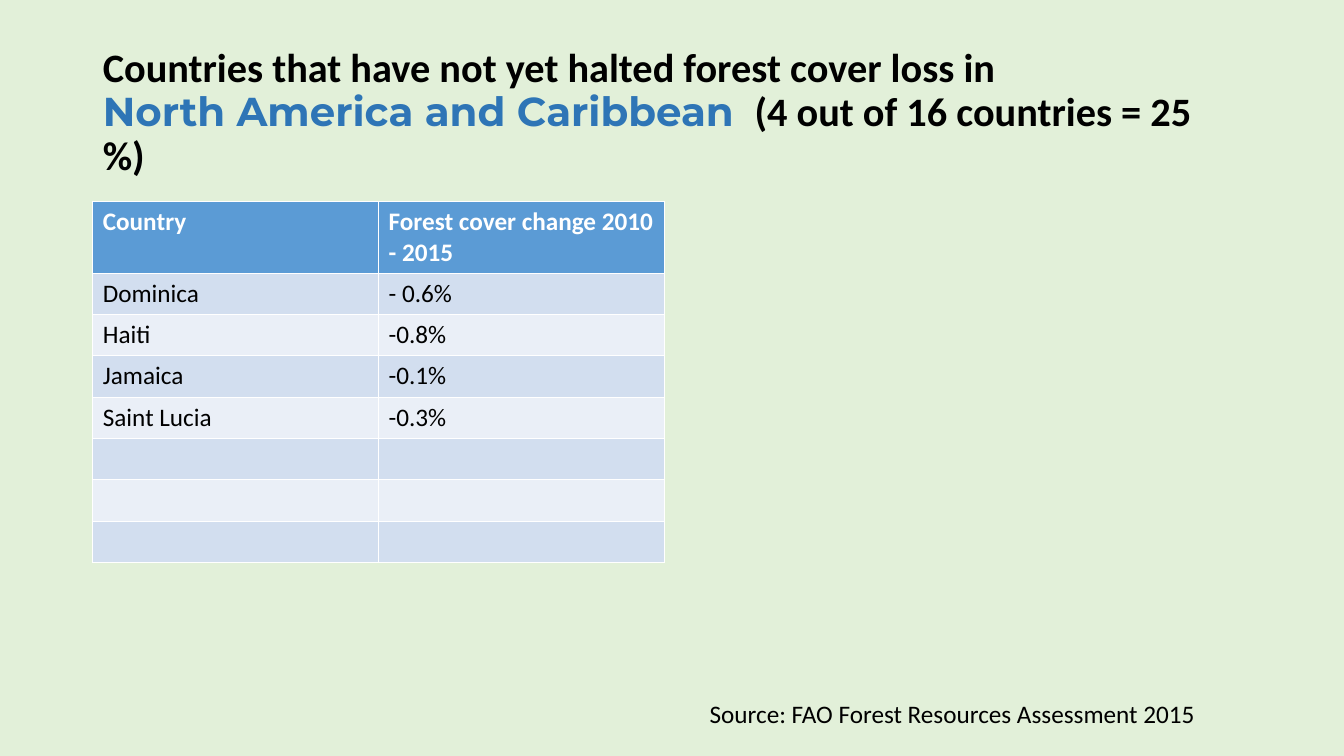
from pptx import Presentation
from pptx.dml.color import RGBColor
from pptx.enum import text
from pptx.util import Inches, Pt


def rgb(value):
    return RGBColor.from_string(value)


def style(r, size, color, bold=False, font="Calibri"):
    r.font.name = font
    r.font.size = Pt(size)
    r.font.bold = bold
    r.font.color.rgb = rgb(color)


prs = Presentation()
prs.slide_width, prs.slide_height = Inches(13.33), Inches(7.5)
s = prs.slides.add_slide(prs.slide_layouts[5])
s.background.fill.solid()
s.background.fill.fore_color.rgb = rgb("E2F0D9")

title = s.shapes.title
title.left, title.top = Inches(0.92), Inches(0.4)
title.width, title.height = Inches(11.5), Inches(1.45)
tf = title.text_frame
tf.word_wrap = True
tf.auto_size = text.MSO_AUTO_SIZE.NONE
tf.vertical_anchor = text.MSO_ANCHOR.MIDDLE
p = tf.paragraphs[0]
p.text = "Countries that have not yet halted forest cover loss in\v"
p.alignment = text.PP_ALIGN.LEFT
p.line_spacing = 0.9
style(p.runs[0], 28.8, "000000", True)
for words, color, font in [
    ("North America and Caribbean ", "2E75B6", "Montserrat"),
    (" (4 out of 16 countries = 25 %)", "000000", "Calibri"),
]:
    r = p.add_run()
    r.text = words
    style(r, 28.8, color, True, font)

rows = [
    ("Country", "Forest cover change 2010 - 2015"),
    ("Dominica", "- 0.6%"),
    ("Haiti", "-0.8%"),
    ("Jamaica", "-0.1%"),
    ("Saint Lucia", "-0.3%"),
] + [("", "")] * 3
table = s.shapes.add_table(
    len(rows), 2, Inches(0.92), Inches(2), Inches(5.67), Inches(3.54)
).table
for i, row in enumerate(rows):
    header = i == 0
    table.rows[i].height = Inches(0.7 if header else 0.41)
    fill = "5B9BD5" if header else "D2DEEF" if i % 2 else "EAEFF7"
    for j, words in enumerate(row):
        cell = table.cell(i, j)
        cell.fill.solid()
        cell.fill.fore_color.rgb = rgb(fill)
        cell.text = words
        for r in cell.text_frame.paragraphs[0].runs:
            style(r, 18, "FFFFFF" if header else "000000", header)

source = s.shapes.add_textbox(Inches(6.94), Inches(6.88), Inches(5.48), Inches(0.4))
tf = source.text_frame
tf.word_wrap = True
tf.auto_size = text.MSO_AUTO_SIZE.SHAPE_TO_FIT_TEXT
tf.text = "Source: FAO Forest Resources Assessment 2015"
style(tf.paragraphs[0].runs[0], 18, "000000")

prs.save("out.pptx")
